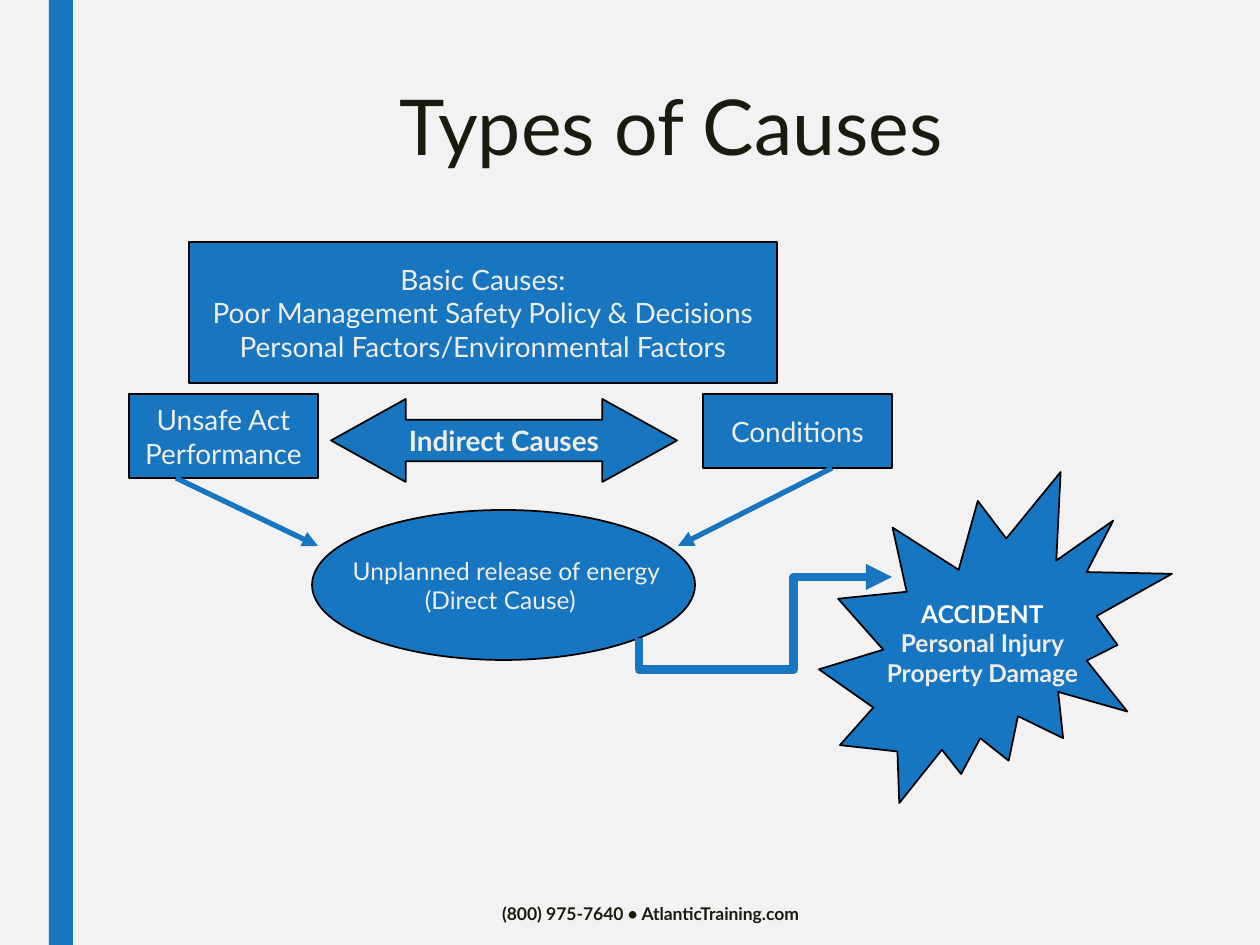
import pptx
import pptx.dml.color
import pptx.enum.shapes
import pptx.enum.text
import pptx.oxml.ns
import pptx.util
from lxml import etree

RGBColor = pptx.dml.color.RGBColor
SHAPE = pptx.enum.shapes.MSO_SHAPE
CONNECTOR = pptx.enum.shapes.MSO_CONNECTOR
ANCHOR = pptx.enum.text.MSO_ANCHOR
CENTER = pptx.enum.text.PP_ALIGN.CENTER

BACKGROUND = RGBColor(0xF2, 0xF2, 0xF2)
BLUE = RGBColor(0x17, 0x76, 0xC1)
BOX_BLUE = RGBColor(0x17, 0x76, 0xBF)
BLACK = RGBColor(0, 0, 0)
WHITE = RGBColor(0xFF, 0xFF, 0xFF)
CREAM = RGBColor(0xEF, 0xED, 0xE3)
DARK = RGBColor(0x19, 0x1B, 0x0E)

FONT = "Lato"
EMU_PER_PX = 914400 / 126
SLIDE_SIZE = (1260, 945)

# Places are (left, top, width, height) in px.
SIDE_BAR = (49, 0, 24, 945)
TITLE = {"text": "Types of Causes", "place": (136, 84, 1071, 158), "anchor": ANCHOR.TOP,
         "spacing": 0.89, "size": 44, "bold": False}
FOOTER = {"text": "(800) 975-7640 • AtlanticTraining.com", "place": (451, 882, 399, 63),
          "anchor": ANCHOR.MIDDLE, "spacing": 1.0, "size": 10, "bold": True}

# kind, place, fill, text size, bold, lines of (text, colour)
CAUSES = [
    (SHAPE.FLOWCHART_PROCESS, (189, 242, 588, 141), BOX_BLUE, 16, False,
     [("Basic Causes:", CREAM),
      ("Poor Management Safety Policy & Decisions", CREAM),
      ("Personal Factors/Environmental Factors", CREAM)]),
    (SHAPE.FLOWCHART_PROCESS, (129, 394, 189, 84), BOX_BLUE, 16, False,
     [("Unsafe Act", CREAM), ("Performance", CREAM)]),
    (SHAPE.FLOWCHART_PROCESS, (703, 394, 189, 74), BOX_BLUE, 16, False,
     [("Conditions", CREAM)]),
    (SHAPE.OVAL, (312, 510, 383, 150), BLUE, 14, False,
     [(" Unplanned release of energy", CREAM), ("(Direct Cause) ", CREAM)]),
    (SHAPE.LEFT_RIGHT_ARROW, (331, 399, 346, 83), BOX_BLUE, 16, True,
     [("Indirect Causes", CREAM)]),
    (SHAPE.EXPLOSION2, (819, 472, 353, 331), BLUE, 14, True,
     [("ACCIDENT", WHITE), ("Personal Injury", CREAM), ("Property Damage", CREAM)]),
]
ADJUSTMENTS = {SHAPE.LEFT_RIGHT_ARROW: (0.5, 0.9)}

# start, end, colour
STRAIGHT_ARROWS = [
    ((176, 478), (318, 546), BLUE),
    ((832, 468), (678, 546), BOX_BLUE),
]
# The elbow leaves the ellipse downwards, so its frame is turned a quarter
ELBOW_START, ELBOW_END = (639, 638), (892, 577)
ELBOW_BENDS = {"adj1": -52200, "adj2": 61100}


def px(length):
    return pptx.util.Emu(round(length * EMU_PER_PX))


def write(frame, lines, size, bold, spacing=1.0):
    """Fill a text frame with centred (text, colour) lines."""
    for index, (text, color) in enumerate(lines):
        para = frame.paragraphs[0] if index == 0 else frame.add_paragraph()
        para.alignment = CENTER
        para.line_spacing = spacing
        span = para.add_run()
        span.text = text
        font_format = {"name": FONT, "size": pptx.util.Pt(size), "bold": bold}
        for name, value in font_format.items():
            setattr(span.font, name, value)
        span.font.color.rgb = color


def add_text(slide, content):
    frame = slide.shapes.add_textbox(*map(px, content["place"])).text_frame
    frame.word_wrap = True
    frame.vertical_anchor = content["anchor"]
    write(frame, [(content["text"], DARK)], content["size"], content["bold"],
          content["spacing"])


def add_shape(slide, kind, place, fill):
    shape = slide.shapes.add_shape(kind, *map(px, place))
    shape.shadow.inherit = False
    shape.fill.solid()
    shape.fill.fore_color.rgb = fill
    shape.line.fill.background()
    return shape


def add_cause(slide, kind, place, fill, size, bold, lines):
    shape = add_shape(slide, kind, place, fill)
    shape.line.color.rgb = BLACK
    shape.line.width = pptx.util.Pt(1)
    for index, value in enumerate(ADJUSTMENTS.get(kind, ())):
        shape.adjustments[index] = value
    shape.text_frame.word_wrap = False
    shape.text_frame.vertical_anchor = ANCHOR.MIDDLE
    write(shape.text_frame, lines, size, bold)


def add_arrow(slide, kind, start, end, color, width):
    arrow = slide.shapes.add_connector(kind, *map(px, start + end))
    arrow.line.color.rgb = color
    arrow.line.width = pptx.util.Pt(width)
    line = arrow.line._get_or_add_ln()
    etree.SubElement(line, pptx.oxml.ns.qn("a:tailEnd"), type="triangle")
    etree.SubElement(arrow._element.spPr, pptx.oxml.ns.qn("a:effectLst"))
    return arrow


def add_elbow(slide):
    """Add a four-part elbow, drawn in an upright frame and turned by 90 degrees."""
    (x1, y1), (x2, y2) = ELBOW_START, ELBOW_END
    middle_x, middle_y = (x1 + x2) / 2, (y1 + y2) / 2
    half_width, half_height = (y1 - y2) / 2, (x2 - x1) / 2
    arrow = add_arrow(slide, CONNECTOR.ELBOW,
                      (middle_x + half_width, middle_y + half_height),
                      (middle_x - half_width, middle_y - half_height), BOX_BLUE, 5)
    properties = arrow._element.spPr
    properties.find(pptx.oxml.ns.qn("a:xfrm")).set("rot", "5400000")
    geometry = properties.find(pptx.oxml.ns.qn("a:prstGeom"))
    geometry.set("prst", "bentConnector4")
    guides = geometry.find(pptx.oxml.ns.qn("a:avLst"))
    for name, value in ELBOW_BENDS.items():
        etree.SubElement(guides, pptx.oxml.ns.qn("a:gd"), name=name, fmla=f"val {value}")


def main():
    deck = pptx.Presentation()
    deck.slide_width, deck.slide_height = map(px, SLIDE_SIZE)
    slide = deck.slides.add_slide(deck.slide_layouts[6])
    slide.background.fill.solid()
    slide.background.fill.fore_color.rgb = BACKGROUND

    add_shape(slide, SHAPE.RECTANGLE, SIDE_BAR, BLUE)
    add_text(slide, TITLE)
    for cause in CAUSES:
        add_cause(slide, *cause)
    for start, end, color in STRAIGHT_ARROWS:
        add_arrow(slide, CONNECTOR.STRAIGHT, start, end, color, 3)
    add_elbow(slide)
    add_text(slide, FOOTER)
    deck.save("out.pptx")


if __name__ == "__main__":
    main()
